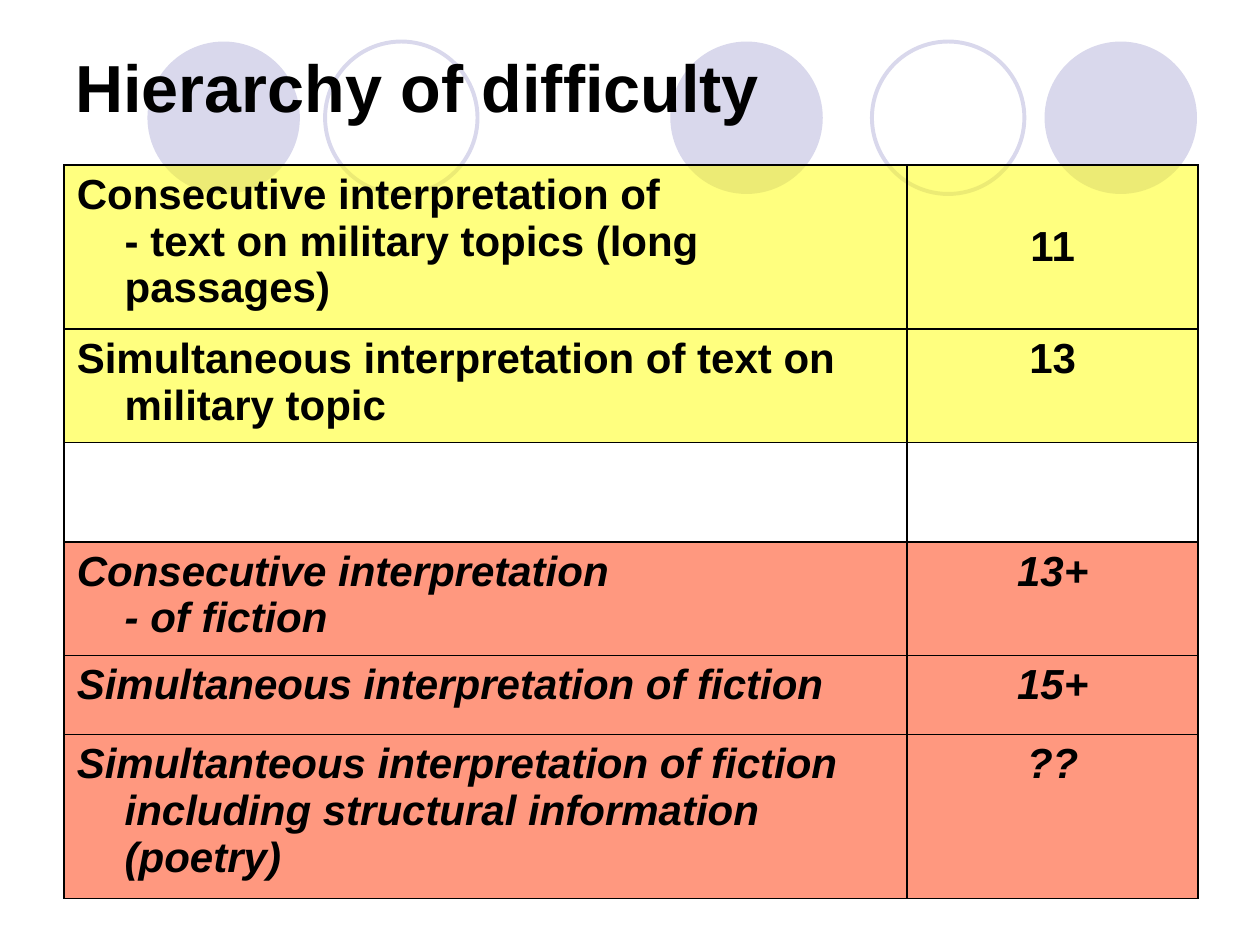
from lxml import etree
from pptx import Presentation
from pptx.dml.color import RGBColor
from pptx.enum.shapes import MSO_SHAPE
from pptx.enum.text import MSO_ANCHOR, PP_ALIGN
from pptx.oxml.ns import qn
from pptx.util import Inches, Pt

OVAL = MSO_SHAPE.OVAL
TOP, MIDDLE = MSO_ANCHOR.TOP, MSO_ANCHOR.MIDDLE
LEFT, CENTER = PP_ALIGN.LEFT, PP_ALIGN.CENTER

# Content
TITLE = "Hierarchy of difficulty"
# (task lines, level, tone, row height, level anchor)
ROWS = [
    (["Consecutive interpretation of", "- text on military topics (long passages)"],
     "11", "yellow", 1.21, MIDDLE),
    (["Simultaneous interpretation of text on military topic"],
     "13", "yellow", 0.84, TOP),
    ([], "", "white", 0.79, TOP),
    (["Consecutive interpretation ", "- of fiction"], "13+", "red", 0.84, TOP),
    (["Simultaneous interpretation of fiction"], "15+", "red", 0.63, TOP),
    (["Simultanteous interpretation of fiction including structural "
      "information (poetry)"], "??", "red", 1.21, TOP),
]
COLUMNS = [6.69, 2.31]
CIRCLES = [(1.17, True), (2.58, False), (5.32, True), (6.92, False), (8.29, True)]
CIRCLE_TOP, CIRCLE_SIZE = 0.33, 1.21
HANGING = 0.38

THEME = {
    "font": "Arial", "title": 38, "body": 24, "border": 1, "ring": 2.25,
    "text": "000000", "circle": "D9D8EC", "opacity": 50,
    "yellow": "FFFF00", "white": "FFFFFF", "red": "FF3300",
}


def rgb(name):
    return RGBColor.from_string(THEME[name])


def add_run(p, text, size, italic=False):
    r = p.add_run()
    r.text = text
    r.font.name = THEME["font"]
    r.font.size = Pt(THEME[size])
    r.font.bold = True
    r.font.italic = italic
    r.font.color.rgb = rgb("text")


def style_cell(cell, tone):
    cell.fill.solid()
    cell.fill.fore_color.rgb = rgb(tone)
    tc_pr = cell._tc.get_or_add_tcPr()
    color = tc_pr.find(qn("a:solidFill")).find(qn("a:srgbClr"))
    etree.SubElement(color, qn("a:alpha"), val=str(THEME["opacity"] * 1000))
    # Borders come before the fill in the cell properties
    for i, side in enumerate(("lnL", "lnR", "lnT", "lnB")):
        ln = etree.Element(qn("a:" + side), w=str(Pt(THEME["border"])))
        fill = etree.SubElement(ln, qn("a:solidFill"))
        etree.SubElement(fill, qn("a:srgbClr"), val=THEME["text"])
        tc_pr.insert(i, ln)


def fill_cell(cell, lines, align, italic):
    p = cell.text_frame.paragraphs[0]
    p.alignment = align
    p_pr = p._p.get_or_add_pPr()
    p_pr.set("marL", str(Inches(HANGING)))
    p_pr.set("indent", str(-Inches(HANGING)))
    for i, line in enumerate(lines):
        if i:
            p.add_line_break()
        add_run(p, line, "body", italic)


prs = Presentation()
prs.slide_width, prs.slide_height = Inches(10), Inches(7.5)
s = prs.slides.add_slide(prs.slide_layouts[6])

# Decorative circles
for left, solid in CIRCLES:
    sp = s.shapes.add_shape(OVAL, Inches(left), Inches(CIRCLE_TOP),
                            Inches(CIRCLE_SIZE), Inches(CIRCLE_SIZE))
    sp.shadow.inherit = False
    if solid:
        sp.fill.solid()
        sp.fill.fore_color.rgb = rgb("circle")
        sp.line.fill.background()
    else:
        sp.fill.background()
        sp.line.color.rgb = rgb("circle")
        sp.line.width = Pt(THEME["ring"])

# Title
tf = s.shapes.add_textbox(Inches(0.5), Inches(0.06), Inches(9), Inches(1.25)).text_frame
tf.word_wrap = True
tf.vertical_anchor = MIDDLE
add_run(tf.paragraphs[0], TITLE, "title")

# Difficulty table
table = s.shapes.add_table(
    len(ROWS), len(COLUMNS), Inches(0.51), Inches(1.31),
    Inches(sum(COLUMNS)), Inches(sum(row[3] for row in ROWS))).table
table.first_row = table.horz_banding = False
for col, width in zip(table.columns, COLUMNS):
    col.width = Inches(width)
for i, (task, level, tone, height, anchor) in enumerate(ROWS):
    table.rows[i].height = Inches(height)
    task_cell, level_cell = table.cell(i, 0), table.cell(i, 1)
    for cell in (task_cell, level_cell):
        style_cell(cell, tone)
    if task:
        fill_cell(task_cell, task, LEFT, tone == "red")
        fill_cell(level_cell, [level], CENTER, tone == "red")
        level_cell.vertical_anchor = anchor

prs.save("out.pptx")
